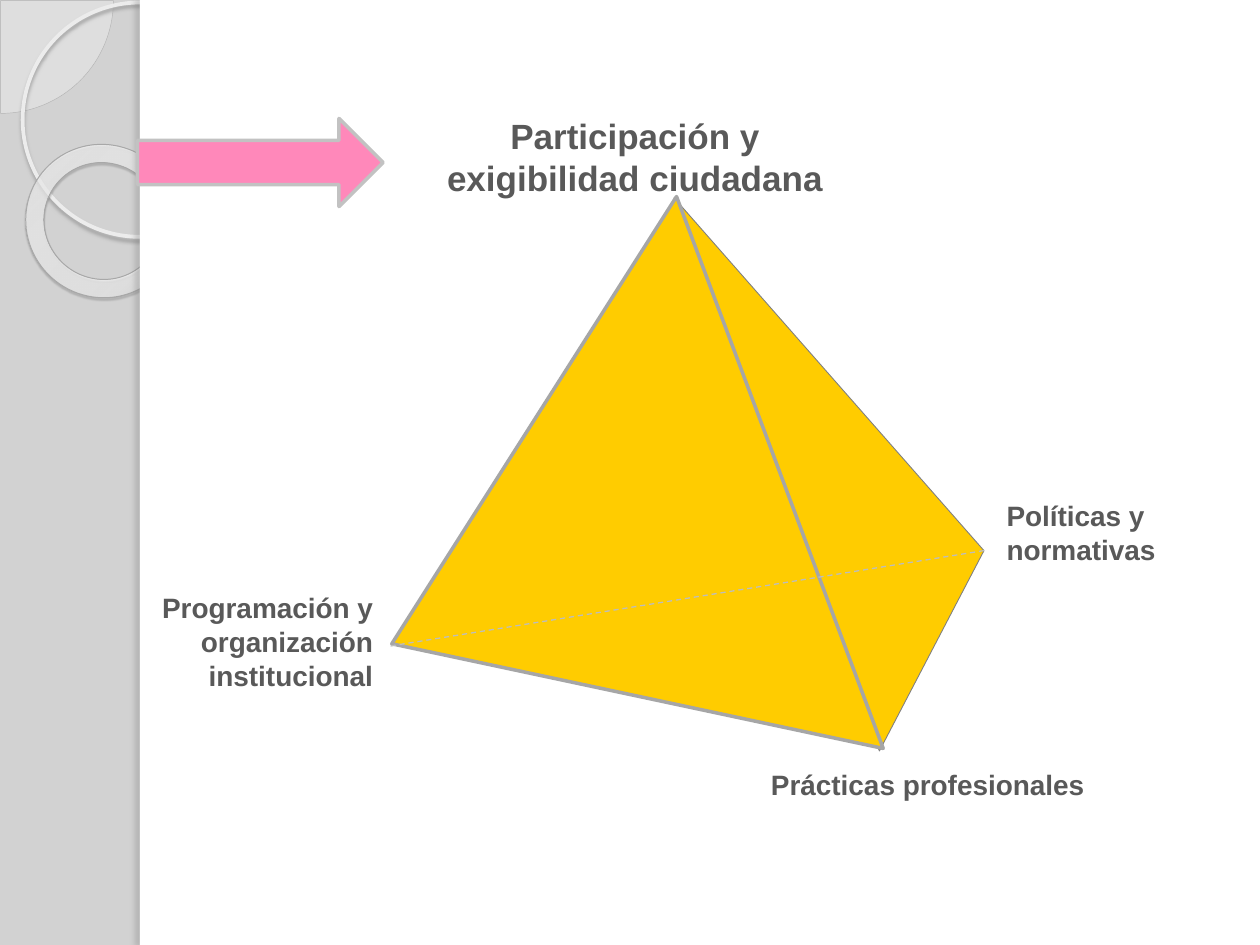
"""Build a slide with a pyramid that joins four labelled dimensions of public action."""
from lxml import etree
from pptx import Presentation
from pptx.dml.color import RGBColor
from pptx.enum.dml import MSO_LINE
from pptx.enum.shapes import MSO_CONNECTOR, MSO_SHAPE
from pptx.enum.text import MSO_AUTO_SIZE, PP_ALIGN
from pptx.oxml import parse_xml
from pptx.oxml.ns import nsdecls, qn
from pptx.util import Inches, Pt

PIE, OVAL, DONUT = MSO_SHAPE.PIE, MSO_SHAPE.OVAL, MSO_SHAPE.DONUT
RECT, ARROW = MSO_SHAPE.RECTANGLE, MSO_SHAPE.RIGHT_ARROW
LEFT, CENTER, RIGHT = PP_ALIGN.LEFT, PP_ALIGN.CENTER, PP_ALIGN.RIGHT
STRAIGHT, DASH = MSO_CONNECTOR.STRAIGHT, MSO_LINE.DASH
GROW = MSO_AUTO_SIZE.SHAPE_TO_FIT_TEXT

THEME = {
    "font": "Arial", "title": 20, "label": 16, "text": "595959",
    "side": "D2D2D2", "page": "FFFFFF", "face": "FFCC00", "arrow": "FF88BA",
    "arrow_line": "C2C2C2", "hidden_edge": "BDBDBD",
    "back_line": "808080", "front_line": "A6A6A6",
    "pie": "F8F8F8", "pie_line": "B4B4B4", "ring": "ECECEC", "donut_line": "A8A8A8",
    "donut": [(0, "FAFAFA", 70), (70, "FDFDFD", 55), (100, "B9B9B9", 60)],
    "ring_shadow": ("9B9B9B", 85, 2, 2, 90),
    "donut_shadow": ("4D4D4D", 35, 1, 1.2, 75),
    "edge_shadow": ("686868", 25, 3, 3, 180),
}

prs = Presentation()
prs.slide_width, prs.slide_height = Inches(10), Inches(7.5)
COL, ROW = prs.slide_width / 100, prs.slide_height / 75
s = prs.slides.add_slide(prs.slide_layouts[6])
s.background.fill.solid()
s.background.fill.fore_color.rgb = RGBColor.from_string(THEME["side"])


def grid(*cells):
    return [round(n * (ROW if i % 2 else COL)) for i, n in enumerate(cells)]


def paint(sp, fill=None, line=None, width=0, shadow=None):
    sp.shadow.inherit = False
    if fill:
        sp.fill.solid()
        sp.fill.fore_color.rgb = RGBColor.from_string(THEME[fill])
    else:
        sp.fill.background()
    if line:
        sp.line.color.rgb = RGBColor.from_string(THEME[line])
        sp.line.width = Pt(width)
    else:
        sp.line.fill.background()
    if shadow:
        color, alpha, blur, dist, angle = THEME[shadow]
        sp._element.spPr.find(qn("a:effectLst")).append(parse_xml(
            f'<a:outerShdw {nsdecls("a")} blurRad="{Pt(blur)}" dist="{Pt(dist)}" '
            f'dir="{angle * 60000}" algn="tl" rotWithShape="0"><a:srgbClr val="{color}">'
            f'<a:alpha val="{alpha * 1000}"/></a:srgbClr></a:outerShdw>'))


pie = s.shapes.add_shape(PIE, *grid(-8.9, -8.9, 17.9, 17.9))
pie.adjustments[0], pie.adjustments[1] = 0, 54
paint(pie, "pie", "pie_line", 0.25)
pie_color = pie._element.spPr.find(qn("a:solidFill")).find(qn("a:srgbClr"))
etree.SubElement(pie_color, qn("a:alpha"), val="33000")

ring = s.shapes.add_shape(OVAL, *grid(1.8, 0.2, 18.6, 18.6))
paint(ring, None, "ring", 2.15, "ring_shadow")

donut = s.shapes.add_shape(DONUT, *grid(2, 11.5, 12.3, 12.1))
donut.adjustments[0] = 0.12
donut.rotation = 38.6
paint(donut, None, "donut_line", 0.58, "donut_shadow")
stops = "".join(
    f'<a:gs pos="{pos * 1000}"><a:srgbClr val="{color}"><a:alpha val="{alpha * 1000}"/>'
    f'</a:srgbClr></a:gs>' for pos, color, alpha in THEME["donut"])
donut_pr = donut._element.spPr
donut_pr.replace(donut_pr.find(qn("a:noFill")), parse_xml(
    f'<a:gradFill {nsdecls("a")} rotWithShape="1"><a:gsLst>{stops}</a:gsLst>'
    '<a:path path="circle"><a:fillToRect l="-408000" t="-50000" r="508000" b="150000"/>'
    '</a:path></a:gradFill>'))

for width, shadow in [(88.9, None), (0.8, "edge_shadow")]:
    panel = s.shapes.add_shape(RECT, *grid(11.1, 0, width, 75))
    paint(panel, "page", shadow=shadow)

FACES = [
    ([(69.8, 59.6), (53.5, 15.7), (78.1, 43.7)], "back_line", 0.5),
    ([(31.1, 51.1), (53.7, 15.6), (70.1, 59.4)], "front_line", 2),
]
for corners, line, width in FACES:
    start, *rest = [grid(*corner) for corner in corners]
    builder = s.shapes.build_freeform(*start)
    builder.add_line_segments(rest, close=True)
    paint(builder.convert_to_shape(), "face", line, width)

LABELS = [
    ((78.9, 39.1, 16.4, 6.4), ["Políticas y", "normativas"], LEFT, "label"),
    ((7.8, 46.4, 22.8, 9.1), ["Programación y organización institucional"], RIGHT, "label"),
    ((60.2, 60.4, 28.9, 3.7), ["Prácticas profesionales"], LEFT, "label"),
    ((32.8, 8.6, 35.2, 7.7), ["Participación y exigibilidad ciudadana"], CENTER, "title"),
]
for box, lines, align, size in LABELS:
    tf = s.shapes.add_textbox(*grid(*box)).text_frame
    tf.word_wrap = True
    tf.auto_size = GROW
    for i, text in enumerate(lines):
        p = tf.add_paragraph() if i else tf.paragraphs[0]
        p.alignment = align
        r = p.add_run()
        r.text = text
        r.font.name, r.font.size, r.font.bold = THEME["font"], Pt(THEME[size]), True
        r.font.color.rgb = RGBColor.from_string(THEME["text"])

edge = s.shapes.add_connector(STRAIGHT, *grid(78.1, 43.7, 30.8, 51.3))
edge.line.color.rgb = RGBColor.from_string(THEME["hidden_edge"])
edge.line.width = Pt(0.75)
edge.line.dash_style = DASH
etree.SubElement(edge._element.spPr, qn("a:effectLst"))

arrow = s.shapes.add_shape(ARROW, *grid(10.9, 9.4, 19.5, 7))
paint(arrow, "arrow", "arrow_line", 2)

prs.save("out.pptx")
